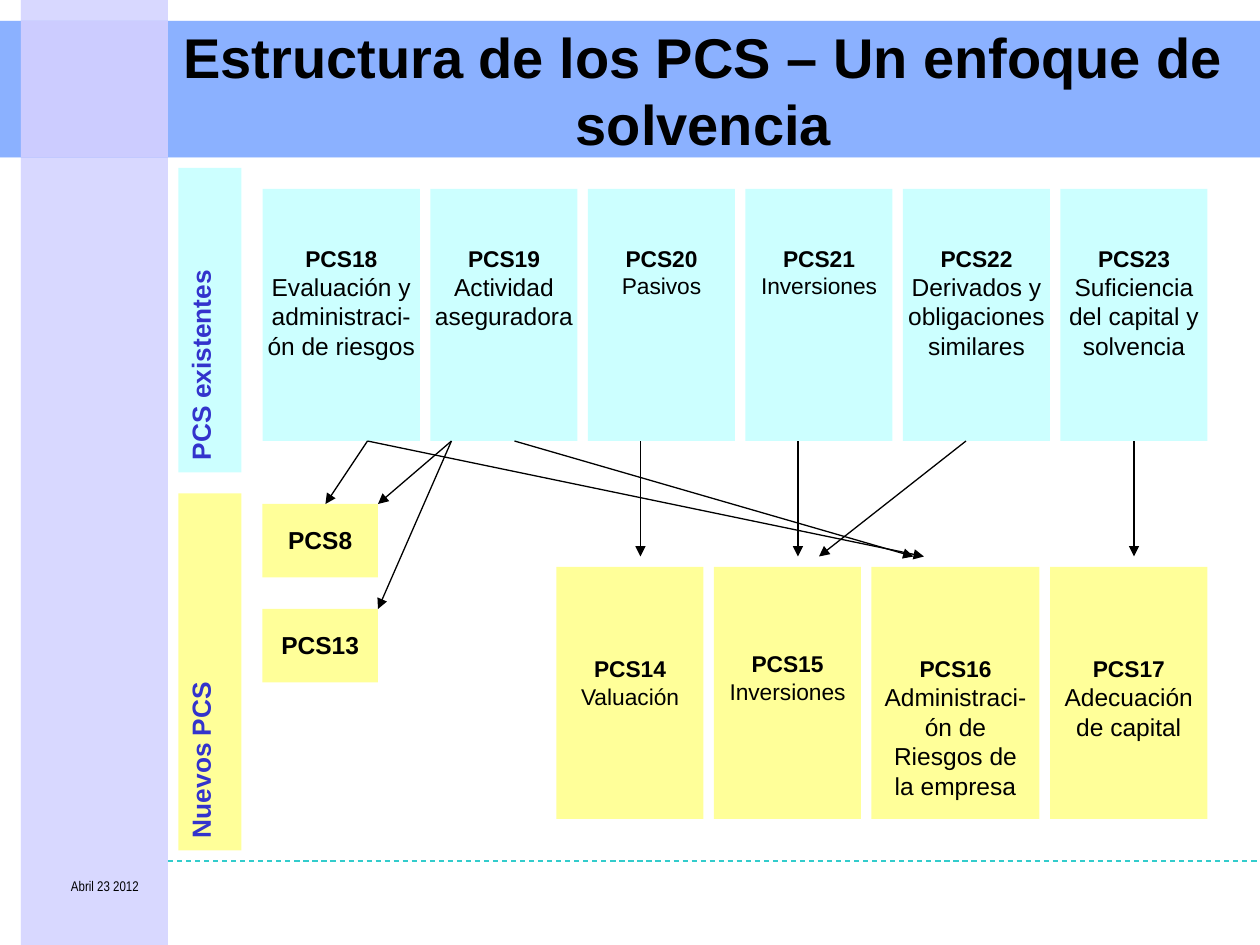
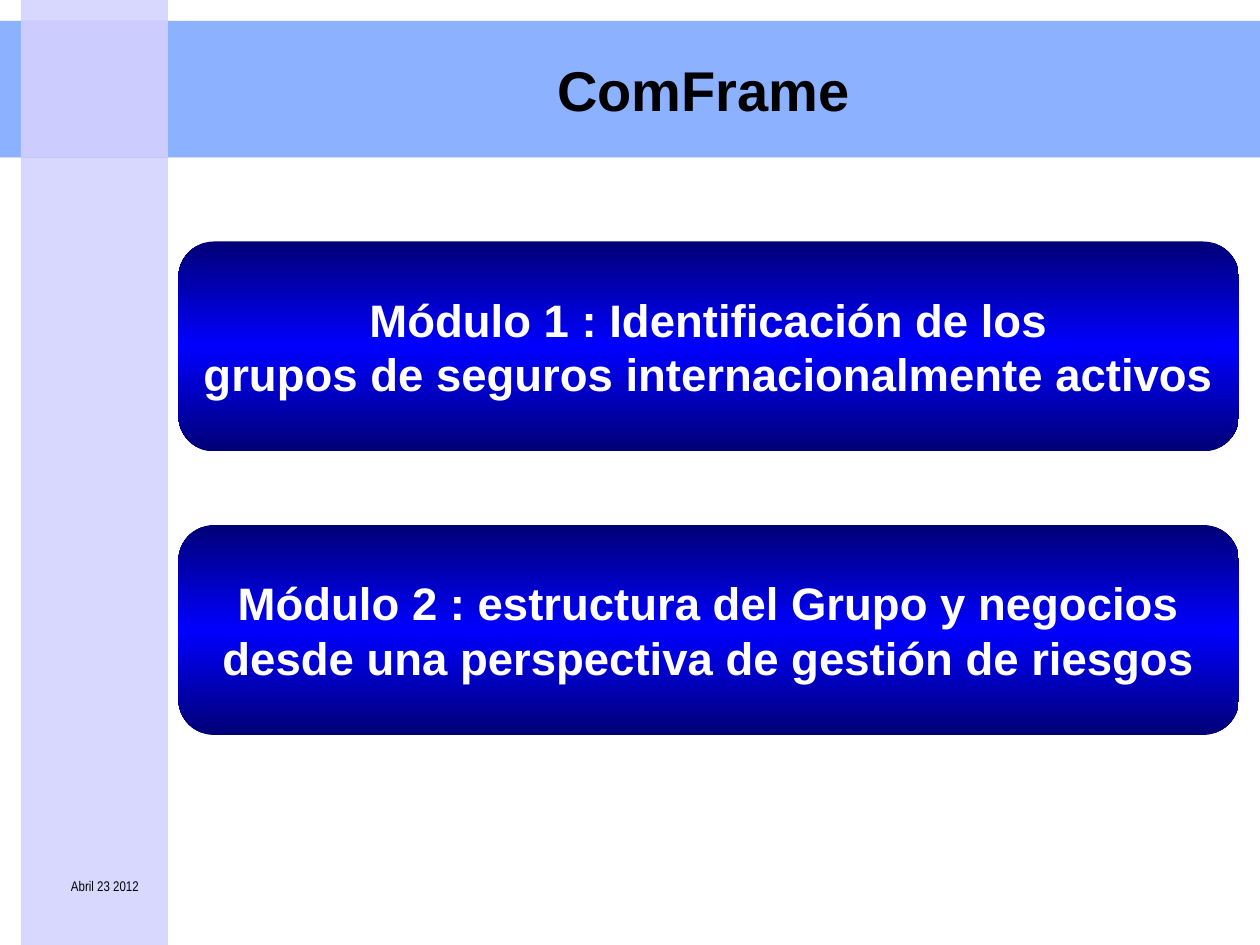
from copy import deepcopy

from lxml import etree
from pptx import Presentation
from pptx.dml.color import RGBColor
from pptx.enum.dml import MSO_LINE
from pptx.enum.shapes import MSO_CONNECTOR, MSO_SHAPE
from pptx.enum.text import MSO_ANCHOR, MSO_AUTO_SIZE, PP_ALIGN
from pptx.oxml.ns import qn
from pptx.util import Inches, Pt

BAND, COLUMN = "6699FF", "CCCCFF"
OLD, NEW = "CCFFFF", "FFFF99"
BLACK, WHITE, LABEL, DASH = "000000", "FFFFFF", "3333CC", "33CCCC"
DARK_BLUE, BLUE = "000076", "0000FF"

prs = Presentation()
prs.slide_width, prs.slide_height = Inches(10), Inches(7.5)
U = prs.slide_width // 120  # grid of 120 columns by 90 rows
rgb = RGBColor.from_string


def add_box(slide, x, y, w, h, fill, kind=MSO_SHAPE.RECTANGLE):
    """Add a borderless shape, placed in grid units."""
    sp = slide.shapes.add_shape(kind, x * U, y * U, w * U, h * U)
    sp.shadow.inherit = False
    sp.line.fill.background()
    sp.fill.solid()
    sp.fill.fore_color.rgb = rgb(fill)
    return sp


def write(tf, lines, color=BLACK, align=PP_ALIGN.CENTER, anchor=MSO_ANCHOR.TOP, font="Arial"):
    """Fill a text frame with (text, size, bold) lines, one paragraph each."""
    tf.word_wrap = True
    tf.auto_size = MSO_AUTO_SIZE.NONE
    tf.vertical_anchor = anchor
    for i, (text, size, bold) in enumerate(lines):
        p = tf.add_paragraph() if i else tf.paragraphs[0]
        p.text = text
        p.alignment = align
        p.font.name, p.font.size, p.font.bold = font, Pt(size), bold
        p.font.color.rgb = rgb(color)


# Shared parts: bands on the layout, title and date on each slide
layout = prs.slide_layouts[5]
titles = ["Estructura de los PCS – Un enfoque de solvencia", "ComFrame"]
slides = [prs.slides.add_slide(layout) for _ in titles]

across, down, crossing = (0, 2, 120, 13), (2, 0, 14, 90), (2, 2, 14, 13)
bands = [(across, BAND, 50), (down, COLUMN, 50), (down, COLUMN, 50),
         (across, BAND, 50), (crossing, COLUMN, 100)]
for i, (area, color, opacity) in enumerate(bands):
    sp = add_box(slides[0], *area, color)
    clr = sp.element.spPr.find(".//" + qn("a:srgbClr"))
    etree.SubElement(clr, qn("a:alpha"), val=str(opacity * 1000))
    layout.shapes.element.insert(2 + i, sp.element)

for s, title in zip(slides, titles):
    date = s.shapes.add_textbox(2 * U, 83 * U, 16 * U, 5 * U)
    write(date.text_frame, [("Abril 23 2012", 8, False)], font="Arial Narrow")
    head = s.shapes.title
    head.left, head.top, head.width, head.height = 16 * U, 2 * U, 102 * U, 13 * U
    write(head.text_frame, [(title, 32, True)], anchor=MSO_ANCHOR.MIDDLE)

# Slide 1: existing and new standards
s = slides[0]
for text, y, h, fill in [("PCS existentes", 16, 29, OLD), ("Nuevos PCS", 47, 34, NEW)]:
    sp = add_box(s, 17, y, 6, h, fill)
    write(sp.text_frame, [(text, 15, True)], LABEL, PP_ALIGN.LEFT)
    sp.element.txBody.find(qn("a:bodyPr")).set("vert", "vert270")

# Each box: name, subject, subject size, width, side inset, top inset
existing = [
    ("PCS18", "Evaluación y administraci-ón de riesgos", 14, 15, 0.02, 0.44),
    ("PCS19", "Actividad aseguradora", 14, 14, 0.02, 0.44),
    ("PCS20", "Pasivos", 13, 14, 0.02, 0.44),
    ("PCS21", "Inversiones", 13, 14, 0.02, 0.44),
    ("PCS22", "Derivados y obligaciones similares", 14, 14, 0.02, 0.44),
    ("PCS23", "Suficiencia del capital y solvencia", 14, 14, 0.02, 0.44),
]
new = [
    ("PCS14", "Valuación", 13, 14, 0.1, 0.7),
    ("PCS15", "Inversiones", 13, 14, 0.02, 0.66),
    ("PCS16", "Administraci-ón de Riesgos de la empresa", 14, 16, 0.1, 0.7),
    ("PCS17", "Adecuación de capital", 14, 15, 0.1, 0.7),
]
boxes = {}
for row, x, y, fill in [(existing, 25, 18, OLD), (new, 53, 54, NEW)]:
    for name, subject, size, w, side, top in row:
        sp = boxes[name] = add_box(s, x, y, w, 24, fill)
        tf = sp.text_frame
        tf.margin_left = tf.margin_right = Inches(side)
        tf.margin_top, tf.margin_bottom = Inches(top), Inches(0.01)
        write(tf, [(name, 13, True), (subject, size, False)])
        x += w + 1

for name, y in [("PCS8", 48), ("PCS13", 58)]:
    tf = add_box(s, 25, y, 11, 7, NEW).text_frame
    tf.margin_left = tf.margin_right = tf.margin_bottom = 0
    tf.margin_top = Inches(0.17)
    write(tf, [(name, 14, True)])

# Arrows from the existing row, then the dashed rule at the foot
arrows = [(35, 31, 48), (43, 36, 48), (43, 36, 58), (35, 88, 53), (49, 87, 53),
          (61, 61, 53), (76, 76, 53), (92, 78, 53), (108, 108, 53)]
lines = [(x1, 42, x2, y2, BLACK) for x1, x2, y2 in arrows] + [(16, 82, 120, 82, DASH)]
for x1, y1, x2, y2, color in lines:
    cxn = s.shapes.add_connector(MSO_CONNECTOR.STRAIGHT, x1 * U, y1 * U, x2 * U, y2 * U)
    cxn.line.width = Pt(0.75)
    cxn.line.color.rgb = rgb(color)
    if color == DASH:
        cxn.line.dash_style = MSO_LINE.DASH
    else:
        etree.SubElement(cxn.line._get_or_add_ln(), qn("a:tailEnd"), type="triangle")
    etree.SubElement(cxn.element.spPr, qn("a:effectLst"))
    if x1 == 108:
        cxn.begin_connect(boxes["PCS23"], 2)

# Slide 2: the two modules
modules = [
    ("Módulo 1 : Identificación de los", "grupos de seguros internacionalmente activos"),
    ("Módulo 2 : estructura del Grupo y negocios", "desde una perspectiva de gestión de riesgos"),
]
for i, texts in enumerate(modules):
    sp = add_box(slides[1], 17, 23 + 27 * i, 101, 20, BLUE, MSO_SHAPE.ROUNDED_RECTANGLE)
    sp.adjustments[0] = 0.17
    sp.fill.gradient()
    sp.fill.gradient_angle = 90
    stops = sp.element.spPr.find(".//" + qn("a:gsLst"))
    stops.append(deepcopy(stops[0]))
    for stop, pos, color in zip(sp.fill.gradient_stops, (0, 0.5, 1), (DARK_BLUE, BLUE, DARK_BLUE)):
        stop.position = pos
        stop.color.rgb = rgb(color)
    write(sp.text_frame, [(t, 26, True) for t in texts], WHITE, anchor=MSO_ANCHOR.MIDDLE)
    sp.text_frame.word_wrap = False

prs.save("out.pptx")
